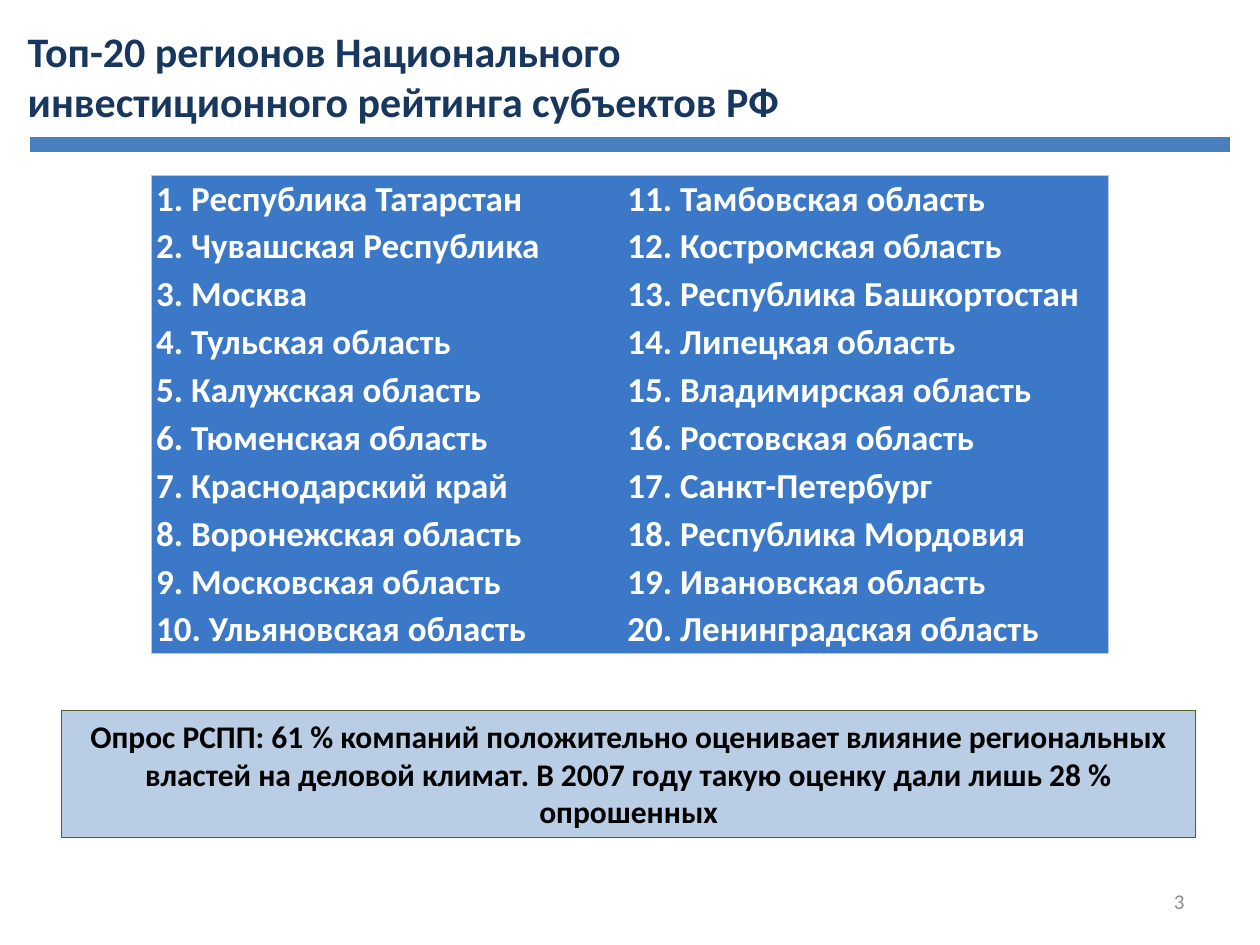
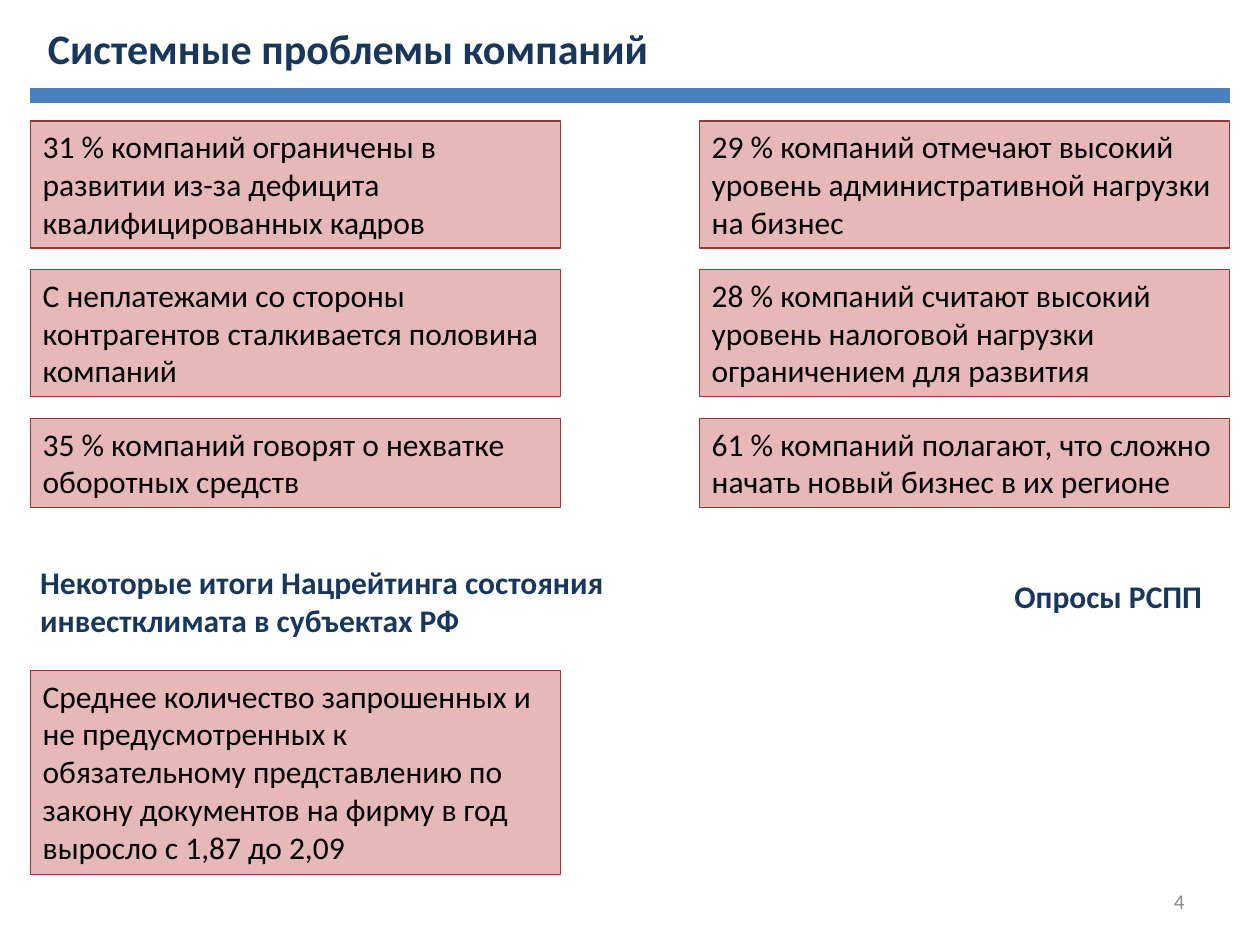
from lxml import etree
from pptx import Presentation
from pptx.dml.color import RGBColor
from pptx.enum import shapes, text
from pptx.oxml import ns
from pptx.util import Inches, Pt

COLORS = {
    "navy": "17375E", "band": "4B7EBC", "number": "8C8C8C", "black": "000000", "white": "FFFFFF",
    "table": "3B79C8", "table_edge": "BDC8DD", "survey": "B9CDE5", "survey_edge": "4F6228",
    "problem": "E6B9B8", "problem_edge": "953735",
}
FONT = "Calibri"


def color(name):
    return RGBColor.from_string(COLORS[name])


def write(frame, content, size=18, ink="black", bold=False,
          align=text.PP_ALIGN.LEFT, anchor=text.MSO_ANCHOR.TOP):
    frame.word_wrap = True
    frame.vertical_anchor = anchor
    frame.text = content
    for paragraph in frame.paragraphs:
        paragraph.alignment = align
        paragraph.font.name = FONT
        paragraph.font.size = Pt(size)
        paragraph.font.bold = bold
        paragraph.font.color.rgb = color(ink)


def add_box(slide, area, content, fill, **style):
    shape = slide.shapes.add_shape(shapes.MSO_SHAPE.RECTANGLE, *map(Inches, area))
    shape.shadow.inherit = False
    shape.fill.solid()
    shape.fill.fore_color.rgb = color(fill)
    shape.line.color.rgb = color(fill + "_edge")
    shape.line.width = Pt(0.75)
    write(shape.text_frame, content, **style)


presentation = Presentation()
presentation.slide_width = Inches(10)
presentation.slide_height = Inches(7.5)

headers = [
    ("Топ-20 регионов Национального инвестиционного рейтинга субъектов РФ", (0.12, 0.15, 6.22, 0.91), 1.15),
    ("Системные проблемы компаний", (0.28, 0.13, 9.45, 0.5), 0.76),
]
for number, (heading, area, band_top) in enumerate(headers, start=3):
    slide = presentation.slides.add_slide(presentation.slide_layouts[5])
    title = slide.shapes.title
    title.left, title.top, title.width, title.height = map(Inches, area)
    write(title.text_frame, heading, size=24, ink="navy", bold=True)
    title.text_frame.auto_size = text.MSO_AUTO_SIZE.NONE

    band = slide.shapes.add_connector(shapes.MSO_CONNECTOR.STRAIGHT, Inches(0.24), Inches(band_top),
                                      Inches(9.76), Inches(band_top))
    band.line.color.rgb = color("band")
    band.line.width = Pt(8.5)
    etree.SubElement(band.element.spPr, ns.qn("a:effectLst"))

    page = slide.shapes.add_textbox(Inches(7.17), Inches(6.95), Inches(2.33), Inches(0.4))
    write(page.text_frame, str(number), size=12, ink="number",
          align=text.PP_ALIGN.RIGHT, anchor=text.MSO_ANCHOR.MIDDLE)

rating_slide, problems_slide = presentation.slides

regions = [
    "Республика Татарстан", "Чувашская Республика", "Москва", "Тульская область",
    "Калужская область", "Тюменская область", "Краснодарский край", "Воронежская область",
    "Московская область", "Ульяновская область", "Тамбовская область", "Костромская область",
    "Республика Башкортостан", "Липецкая область", "Владимирская область", "Ростовская область",
    "Санкт-Петербург", "Республика Мордовия", "Ивановская область", "Ленинградская область",
]
row_count = len(regions) // 2
table_shape = rating_slide.shapes.add_table(row_count, 2, Inches(1.2), Inches(1.39),
                                            Inches(7.6), Inches(0.38 * row_count))
table = table_shape.table
table.first_row = table.horz_banding = False
no_grid_style = "{2D5ABB26-0587-4C30-8999-92F81FD0307C}"
table_shape.element.find(".//" + ns.qn("a:tableStyleId")).text = no_grid_style
for column, width in zip(table.columns, (3.74, 3.86)):
    column.width = Inches(width)
for row in table.rows:
    row.height = Inches(0.38)

for index, region in enumerate(regions):
    column, row = divmod(index, row_count)
    cell = table.cell(row, column)
    write(cell.text_frame, f"{index + 1}. {region}", size=20, ink="white", bold=True)
    cell.vertical_anchor = text.MSO_ANCHOR.MIDDLE
    cell.margin_left = cell.margin_right = Inches(0.04)
    cell.margin_top = cell.margin_bottom = Inches(0.02)
    cell.fill.solid()
    cell.fill.fore_color.rgb = color("table")
    outer_edges = {"lnB": row == row_count - 1, "lnT": row == 0, "lnR": column == 1, "lnL": column == 0}
    properties = cell.fill.fore_color and table.cell(row, column)._tc.get_or_add_tcPr()
    for edge, is_outer in outer_edges.items():
        if is_outer:
            line = etree.Element(ns.qn("a:" + edge), w=str(Pt(0.75)))
            solid = etree.SubElement(line, ns.qn("a:solidFill"))
            etree.SubElement(solid, ns.qn("a:srgbClr"), val=COLORS["table_edge"])
            properties.insert(0, line)

add_box(rating_slide, (0.49, 5.64, 9, 1.01),
        "Опрос РСПП: 61 % компаний положительно оценивает влияние региональных властей "
        "на деловой климат. В 2007 году такую оценку дали лишь 28 % опрошенных",
        "survey", bold=True, align=text.PP_ALIGN.CENTER)

problem_columns = {
    0.24: [
        "31 % компаний ограничены в развитии из-за дефицита квалифицированных кадров",
        "С неплатежами со стороны контрагентов сталкивается половина компаний",
        "35 % компаний говорят о нехватке оборотных средств",
    ],
    5.55: [
        "29 % компаний отмечают высокий уровень административной нагрузки на бизнес",
        "28 % компаний считают высокий уровень налоговой нагрузки ограничением для развития",
        "61 % компаний полагают, что сложно\nначать новый бизнес в их регионе",
    ],
}
for left, problems in problem_columns.items():
    for row, (problem, height) in enumerate(zip(problems, (1.01, 1.01, 0.71))):
        add_box(problems_slide, (left, 0.96 + 1.18 * row, 4.21, height), problem, "problem")

add_box(problems_slide, (0.24, 5.32, 4.21, 1.62),
        "Среднее количество запрошенных и не предусмотренных к обязательному представлению "
        "по закону документов на фирму в год выросло с 1,87 до 2,09", "problem")

source_labels = [
    ("Некоторые итоги Нацрейтинга состояния инвестклимата в субъектах РФ",
     (0.22, 4.42, 4.72, 0.71), text.PP_ALIGN.LEFT),
    ("Опросы РСПП", (7.28, 4.53, 2.36, 0.4), text.PP_ALIGN.RIGHT),
]
for label, area, align in source_labels:
    label_box = problems_slide.shapes.add_textbox(*map(Inches, area))
    write(label_box.text_frame, label, ink="navy", bold=True, align=align)

presentation.save("out.pptx")
